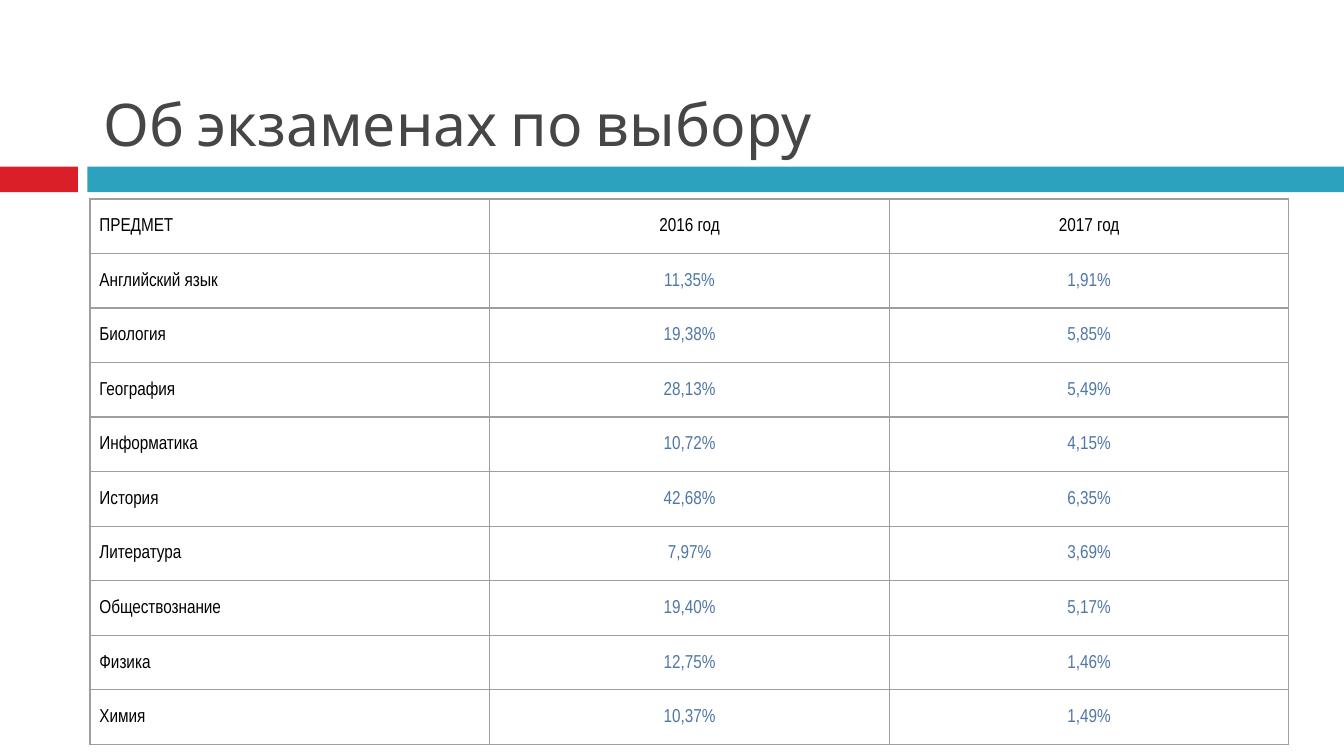
"""Build the slide on elective exam shares by subject and year."""
from lxml.etree import SubElement
from pptx import Presentation
from pptx.dml.color import RGBColor
from pptx.enum.shapes import MSO_SHAPE as Shape
from pptx.enum.text import MSO_ANCHOR as Anchor, PP_ALIGN as Align
from pptx.oxml.ns import qn
from pptx.util import Inches, Pt

TITLE = "Об экзаменах по выбору"
HEADER = ("ПРЕДМЕТ", "2016 год", "2017 год")
RESULTS = [
    ("Английский язык", "11,35%", "1,91%"),
    ("Биология", "19,38%", "5,85%"),
    ("География", "28,13%", "5,49%"),
    ("Информатика", "10,72%", "4,15%"),
    ("История", "42,68%", "6,35%"),
    ("Литература", "7,97%", "3,69%"),
    ("Обществознание", "19,40%", "5,17%"),
    ("Физика", "12,75%", "1,46%"),
    ("Химия", "10,37%", "1,49%"),
]
COLORS = {
    "red": "DA1F28", "teal": "2DA2BF", "title": "464646", "label": "000000",
    "share": "5077A6", "border": "9E9E9E", "paper": "FFFFFF",
}
SLIDE_WIDTH = Inches(10)
SLIDE_HEIGHT = SLIDE_WIDTH * 9 // 16
BANDS = [("red", 0, 0.58), ("teal", 0.65, 9.35)]
BAND_TOP, BAND_HEIGHT = 1.24, 0.19
LEFT, WIDTH = 0.67, 8.92
TABLE_TOP, TABLE_HEIGHT = 1.48, 4.06
TITLE_FONT = {"name": "Cabin", "size": Pt(31.5), "bold": False}
CELL_FONT = {"name": "Arial Narrow", "size": Pt(10), "bold": False}
CELL_FORMAT = {
    "vertical_anchor": Anchor.MIDDLE,
    "margin_left": Inches(0.07), "margin_right": Inches(0.07),
    "margin_top": 0, "margin_bottom": 0,
}


def apply(target, values):
    for key, value in values.items():
        setattr(target, key, value)


def color(name):
    return RGBColor.from_string(COLORS[name])


def write(paragraph, text, font, color_name, align):
    run = paragraph.add_run()
    run.text = text
    apply(run.font, font)
    run.font.color.rgb = color(color_name)
    paragraph.alignment = align


def add_borders(cell):
    properties = cell._tc.get_or_add_tcPr()
    for side in ("lnL", "lnR", "lnT", "lnB"):
        border = SubElement(properties, qn(f"a:{side}"), w=str(Pt(0.75)))
        fill = SubElement(border, qn("a:solidFill"))
        SubElement(fill, qn("a:srgbClr"), val=COLORS["border"])


def add_bands(slide):
    for name, left, width in BANDS:
        band = slide.shapes.add_shape(
            Shape.RECTANGLE, Inches(left), Inches(BAND_TOP), Inches(width), Inches(BAND_HEIGHT))
        band.shadow.inherit = False
        band.fill.solid()
        band.fill.fore_color.rgb = color(name)
        band.line.fill.background()


def add_title(slide):
    title = slide.shapes.title
    apply(title, {"left": Inches(LEFT), "top": Inches(0.13),
                  "width": Inches(WIDTH), "height": Inches(1.1)})
    title.text_frame.vertical_anchor = Anchor.BOTTOM
    write(title.text_frame.paragraphs[0], TITLE, TITLE_FONT, "title", Align.LEFT)


def add_results(slide):
    rows = [HEADER, *RESULTS]
    table = slide.shapes.add_table(
        len(rows), len(HEADER), Inches(LEFT), Inches(TABLE_TOP),
        Inches(WIDTH), Inches(TABLE_HEIGHT)).table
    apply(table, {"first_row": False, "horz_banding": False})
    for r, row in enumerate(rows):
        for c, text in enumerate(row):
            cell = table.cell(r, c)
            apply(cell, CELL_FORMAT)
            add_borders(cell)
            cell.fill.solid()
            cell.fill.fore_color.rgb = color("paper")
            paragraph = cell.text_frame.paragraphs[0]
            paragraph.line_spacing = 1.07
            write(paragraph, text, CELL_FONT, "share" if r and c else "label",
                  Align.CENTER if c else Align.LEFT)


def main():
    deck = Presentation()
    apply(deck, {"slide_width": SLIDE_WIDTH, "slide_height": SLIDE_HEIGHT})
    slide = deck.slides.add_slide(deck.slide_layouts.get_by_name("Title Only"))
    add_bands(slide)
    add_title(slide)
    add_results(slide)
    deck.save("out.pptx")


if __name__ == "__main__":
    main()
